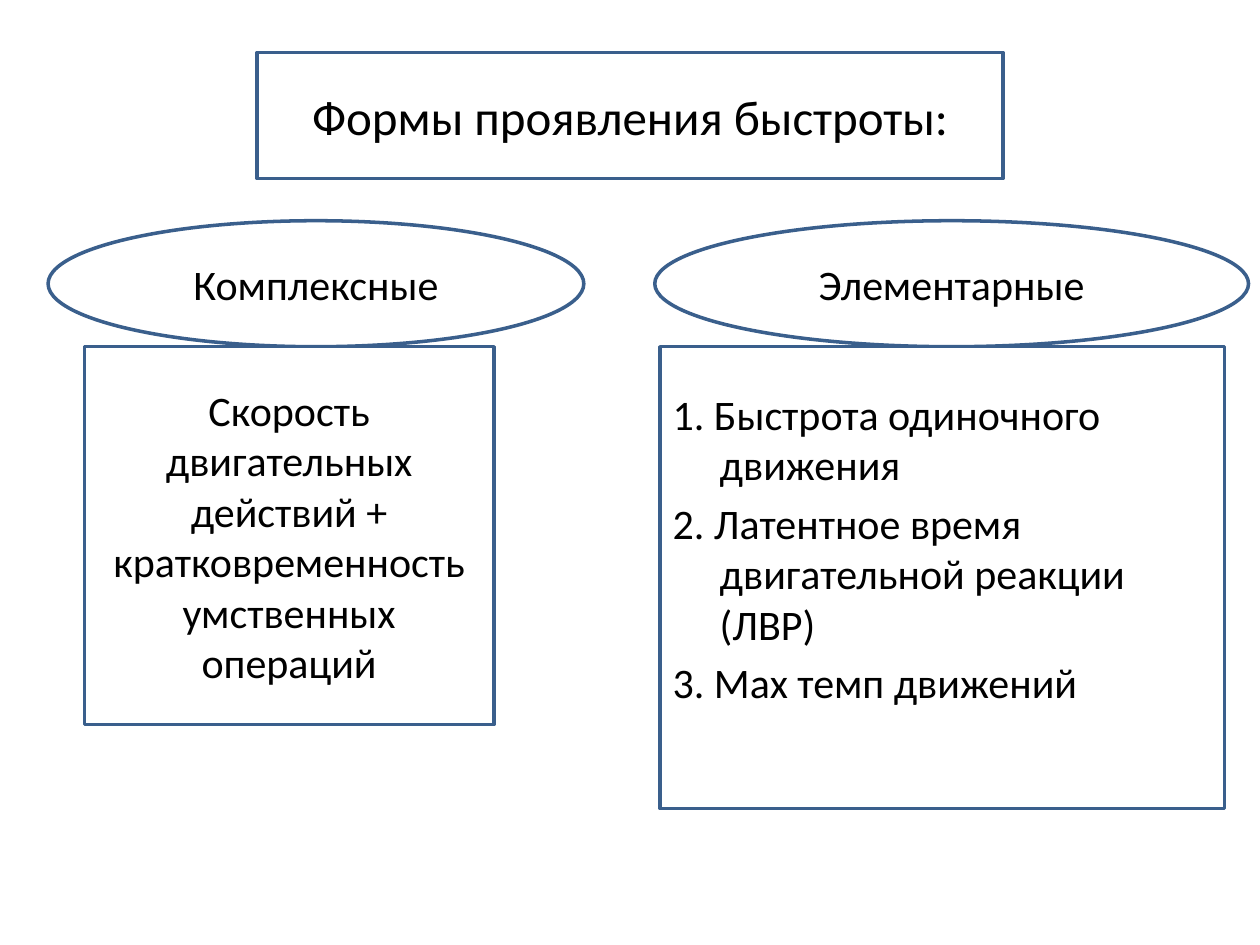
from pptx import Presentation
from pptx.dml.color import RGBColor
from pptx.enum.shapes import MSO_SHAPE
from pptx.enum.text import MSO_ANCHOR, MSO_AUTO_SIZE, PP_ALIGN
from pptx.util import Cm, Pt

RECTANGLE, ELLIPSE = MSO_SHAPE.RECTANGLE, MSO_SHAPE.OVAL
CENTER, LEFT = PP_ALIGN.CENTER, PP_ALIGN.LEFT
MIDDLE, NO_AUTOFIT = MSO_ANCHOR.MIDDLE, MSO_AUTO_SIZE.NONE

COLORS = {"fill": "FFFFFF", "line": "3A5F8C", "text": "000000"}
FONT = "Calibri"

# Content: left and width in cm
TITLE = "Формы проявления быстроты:"
COLUMNS = [
    {
        "heading": "Комплексные", "heading_span": (0.97, 10.8),
        "body": ["Скорость двигательных действий + кратковременность "
                 "умственных операций"],
        "body_span": (1.7, 8.26), "body_height": 7.62,
        "format": {},
    },
    {
        "heading": "Элементарные", "heading_span": (13.2, 11.97),
        "body": ["1. Быстрота одиночного движения",
                 "2. Латентное время двигательной реакции (ЛВР)",
                 "3. Мах темп движений"],
        "body_span": (13.31, 11.38), "body_height": 9.31,
        "format": {"align": LEFT, "hanging": 0.95, "space_before": 4.8,
                   "bottom_inset": 1.33},
    },
]
HEADING_TOP, HEADING_HEIGHT = 4.45, 2.54
BODY_TOP = HEADING_TOP + HEADING_HEIGHT


def color(name):
    return RGBColor.from_string(COLORS[name])


def write_text(shape, paragraphs, size=24, align=CENTER, hanging=0,
               space_before=0, bottom_inset=0.13):
    frame = shape.text_frame
    frame.text = "\n".join(paragraphs)
    frame.word_wrap = True
    frame.auto_size = NO_AUTOFIT
    frame.vertical_anchor = MIDDLE
    frame.margin_bottom = Cm(bottom_inset)
    for paragraph in frame.paragraphs:
        paragraph.alignment = align
        paragraph.space_before = Pt(space_before)
        paragraph.font.name = FONT
        paragraph.font.size = Pt(size)
        for run in paragraph.runs:
            run.font.name = FONT
            run.font.size = Pt(size)
            run.font.color.rgb = color("text")
        if hanging:
            properties = paragraph._p.get_or_add_pPr()
            properties.set("marL", str(Cm(hanging)))
            properties.set("indent", str(-Cm(hanging)))


def outline(shape):
    shape.fill.solid()
    shape.fill.fore_color.rgb = color("fill")
    shape.line.color.rgb = color("line")
    shape.line.width = Pt(2)


def add_box(slide, kind, span, top, height, paragraphs, **text_format):
    left, width = span
    shape = slide.shapes.add_shape(kind, Cm(left), Cm(top), Cm(width), Cm(height))
    shape.shadow.inherit = False
    outline(shape)
    write_text(shape, paragraphs, **text_format)


def main():
    presentation = Presentation()
    presentation.slide_width, presentation.slide_height = Cm(25.4), Cm(19.05)
    slide = presentation.slides.add_slide(presentation.slide_layouts[5])

    # Title
    title = slide.shapes.title
    title.left, title.top = Cm(5.18), Cm(1.06)
    title.width, title.height = Cm(15.04), Cm(2.54)
    outline(title)
    write_text(title, [TITLE], size=28)

    # Headings, then the boxes under them
    for column in COLUMNS:
        add_box(slide, ELLIPSE, column["heading_span"], HEADING_TOP,
                HEADING_HEIGHT, [column["heading"]])
    for column in COLUMNS:
        add_box(slide, RECTANGLE, column["body_span"], BODY_TOP,
                column["body_height"], column["body"], **column["format"])

    presentation.save("out.pptx")


if __name__ == "__main__":
    main()
